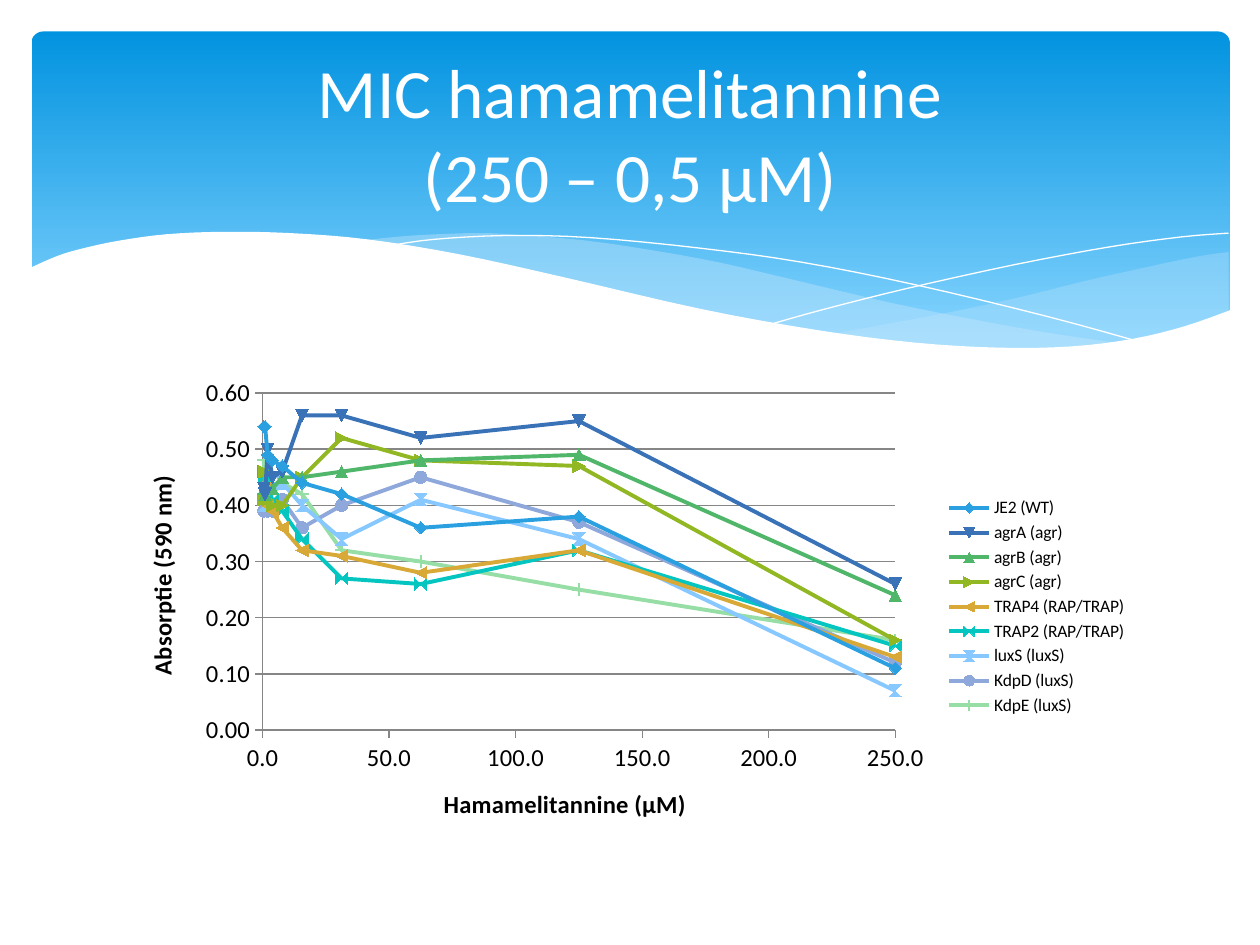
"""Build the hamamelitannine MIC slide: wave banner, title and scatter chart."""
import dataclasses
import itertools

import lxml.etree
import pptx
import pptx.chart.data
import pptx.dml.color
import pptx.enum.chart
import pptx.enum.shapes
import pptx.enum.text
import pptx.oxml.ns
import pptx.util

Pt = pptx.util.Pt
qn = pptx.oxml.ns.qn
MARKER = pptx.enum.chart.XL_MARKER_STYLE


@dataclasses.dataclass(frozen=True)
class Theme:
    font: str = "Calibri"
    white: str = "FFFFFF"
    text: str = "000000"
    axis: str = "868686"
    banner_top: str = "0293E0"
    banner_bottom: str = "83D3FE"
    wave: str = "C6E7FC"
    title_size: float = 39.6
    axis_size: float = 14
    legend_size: float = 10


THEME = Theme()

RIGHT_WAVE = [
    [(702, 144), (682.6, 146.9), (652, 153.4), (620, 160.6), (579.6, 170.6),
     (542, 178.6), (508, 185), (476, 190.8)],
    [(476, 190.8), (507.6, 195), (545, 198.7), (578, 200), (615, 198.7),
     (652, 193.7), (678, 186.5), (702, 177.8)],
]
CENTRE_WAVE = [
    [(643, 196.6), (602.6, 190.8), (558, 182.9), (508, 172.8), (453, 159.8),
     (410, 149.8), (370, 142.6), (335, 137.5), (302, 134.6), (273.6, 133.2),
     (236, 134.6), (206, 137.5)],
    [(206, 137.5), (246, 143.3), (291, 151.9), (323, 159.8), (381.6, 172.8),
     (432.7, 183.6), (479, 191.5), (521, 197.3), (565, 200), (603, 200.2),
     (643, 196.6)],
]
FALLING_LINE = [
    [(222.5, 140.4), (247.7, 136.8), (288.7, 134.6), (337.7, 135.8), (400, 141.8),
     (458, 149.8), (523, 162.7), (598, 180.7), (653, 195.8)],
]
RISING_LINE = [
    [(441.4, 185), (470, 177), (518, 164.9), (580, 151.2), (634, 141.1),
     (675, 135.4), (702, 133.2)],
]
WHITE_WAVE = [
    [(703.4, 177.1), (676.8, 186.5), (647, 193.7), (612, 198), (571, 198.7),
     (522.7, 195.8), (466.6, 188.6), (399.6, 176.4), (322, 158.4), (262.8, 145.4),
     (210, 136.8), (165.6, 133.2), (127, 132.5), (95, 133.9), (68.4, 137.5),
     (48, 141.8), (33, 146.2), (16.6, 153.4)],
    [(16.6, 236.9), (703.4, 236.9)],
]

CONCENTRATIONS = [250, 125, 62.5, 31.25, 15.6, 7.8, 3.9, 2, 1, 0.5]
STRAINS = [
    ("JE2 (WT)", "2AA0E0", MARKER.DIAMOND,
     [0.11, 0.38, 0.36, 0.42, 0.44, 0.47, 0.48, 0.49, 0.54, 0.54]),
    ("agrA (agr)", "3A72B8", None,
     [0.26, 0.55, 0.52, 0.56, 0.56, 0.46, 0.45, 0.5, 0.42, 0.43]),
    ("agrB (agr)", "50B66A", MARKER.TRIANGLE,
     [0.24, 0.49, 0.48, 0.46, 0.45, 0.45, 0.43, 0.43, 0.42, 0.43]),
    ("agrC (agr)", "91B722", None,
     [0.16, 0.47, 0.48, 0.52, 0.45, 0.4, 0.4, 0.41, 0.46, 0.41]),
    ("TRAP4 (RAP/TRAP)", "D8A937", None,
     [0.13, 0.32, 0.28, 0.31, 0.32, 0.36, 0.39, 0.4, 0.43, 0.41]),
    ("TRAP2 (RAP/TRAP)", "04C5C0", None,
     [0.15, 0.32, 0.26, 0.27, 0.34, 0.39, 0.41, 0.43, 0.45, 0.46]),
    ("luxS (luxS)", "86C8FF", None,
     [0.07, 0.34, 0.41, 0.34, 0.4, 0.44, 0.43, 0.42, 0.43, 0.4]),
    ("KdpD (luxS)", "8FA8DC", MARKER.CIRCLE,
     [0.12, 0.37, 0.45, 0.4, 0.36, 0.41, 0.39, 0.39, 0.44, 0.39]),
    ("KdpE (luxS)", "96DEA6", MARKER.PLUS,
     [0.16, 0.25, 0.3, 0.32, 0.42, 0.44, 0.42, 0.42, 0.42, 0.48]),
]


def rgb(value):
    """Return the colour object for a hex string."""
    return pptx.dml.color.RGBColor.from_string(value)


def paint(fill, color):
    """Give a fill one solid colour."""
    fill.solid()
    fill.fore_color.rgb = rgb(color)


def style_font(font, size, color, bold=False):
    """Apply the theme typeface with a size, colour and weight."""
    font.name, font.size, font.bold = THEME.font, Pt(size), bold
    font.color.rgb = rgb(color)


def smooth(strand, steps=4):
    """Return points on a Catmull-Rom curve through the strand."""
    padded = [strand[0], *strand, strand[-1]]
    points = [strand[0]]
    for a, b, c, d in zip(padded, padded[1:], padded[2:], padded[3:]):
        for t in (step / steps for step in range(1, steps + 1)):
            points.append(tuple(
                (2 * q + (r - p) * t + (2 * p - 5 * q + 4 * r - s) * t ** 2
                 + (3 * q - p - 3 * r + s) * t ** 3) / 2
                for p, q, r, s in zip(a, b, c, d)))
    return points


def add_curve(slide, strands, fill=None, opacity=100):
    """Draw joined strands as a filled wave, or as a white hairline without fill."""
    curve = itertools.chain.from_iterable(smooth(strand) for strand in strands)
    points = [(Pt(x), Pt(y)) for x, y in curve]
    builder = slide.shapes.build_freeform(*points[0], scale=1.0)
    builder.add_line_segments(points[1:], close=fill is not None)
    shape = builder.convert_to_shape()
    shape.shadow.inherit = False
    if fill is None:
        shape.fill.background()
        paint(shape.line.fill, THEME.white)
        shape.line.width = Pt(0)
        return
    shape.line.fill.background()
    paint(shape.fill, fill)
    if opacity < 100:
        color = shape.element.spPr.find(qn("a:solidFill"))[0]
        lxml.etree.SubElement(color, qn("a:alpha"), val=str(opacity * 1000))


def add_banner(slide):
    """Draw the rounded gradient banner."""
    shape = slide.shapes.add_shape(pptx.enum.shapes.MSO_SHAPE.ROUNDED_RECTANGLE,
                                   Pt(18), Pt(18), Pt(684.7), Pt(194.4))
    shape.adjustments[0] = 0.034
    shape.shadow.inherit = False
    shape.line.fill.background()
    shape.fill.gradient()
    shape.fill.gradient_angle = 270
    stops = [(0, THEME.banner_top), (0.9, THEME.banner_bottom)]
    for stop, (position, color) in zip(shape.fill.gradient_stops, stops):
        stop.position = position
        stop.color.rgb = rgb(color)


def format_title(slide, text):
    """Place the title in front of the banner and format it."""
    title = slide.shapes.title
    title.left, title.top, title.width, title.height = Pt(36), Pt(26.6), Pt(648), Pt(98.6)
    frame = title.text_frame
    frame.text = text
    frame.auto_size = pptx.enum.text.MSO_AUTO_SIZE.NONE
    frame.vertical_anchor = pptx.enum.text.MSO_ANCHOR.MIDDLE
    paragraph = frame.paragraphs[0]
    paragraph.alignment = pptx.enum.text.PP_ALIGN.CENTER
    style_font(paragraph.font, THEME.title_size, THEME.white)
    title.element.getparent().append(title.element)


def format_axis(axis, title, maximum, step, number_format):
    """Set an axis title, scale, labels and line."""
    axis.minimum_scale, axis.maximum_scale, axis.major_unit = 0, maximum, step
    axis.major_tick_mark = pptx.enum.chart.XL_TICK_MARK.OUTSIDE
    axis.minor_tick_mark = pptx.enum.chart.XL_TICK_MARK.NONE
    axis.tick_labels.number_format = number_format
    axis.tick_labels.number_format_is_linked = False
    style_font(axis.tick_labels.font, THEME.axis_size, THEME.text)
    axis.format.line.color.rgb = rgb(THEME.axis)
    axis.axis_title.text_frame.text = title
    style_font(axis.axis_title.text_frame.paragraphs[0].font,
               THEME.axis_size, THEME.text, bold=True)


def format_series(series, color, marker):
    """Style one smoothed curve and its markers."""
    series.smooth = True
    series.format.line.color.rgb = rgb(color)
    series.format.line.width = Pt(2.25)
    if marker is not None:
        series.marker.style = marker
    series.marker.size = 7
    paint(series.marker.format.fill, color)
    series.marker.format.line.color.rgb = rgb(color)


def place_plot(chart, **fractions):
    """Fix the inner plot area at fractions of the chart."""
    plot_area = chart.element.find(".//" + qn("c:plotArea"))
    for layout in plot_area.findall(qn("c:layout")):
        plot_area.remove(layout)
    layout = lxml.etree.Element(qn("c:layout"))
    manual = lxml.etree.SubElement(layout, qn("c:manualLayout"))
    settings = {"layoutTarget": "inner", "xMode": "edge", "yMode": "edge", **fractions}
    for name, value in settings.items():
        lxml.etree.SubElement(manual, qn("c:" + name), val=str(value))
    plot_area.insert(0, layout)


def add_absorption_chart(slide):
    """Add the scatter chart of absorption against concentration."""
    data = pptx.chart.data.XyChartData()
    for name, _, _, absorptions in STRAINS:
        series = data.add_series(name)
        for concentration, absorption in zip(CONCENTRATIONS, absorptions):
            series.add_data_point(concentration, absorption)
    chart = slide.shapes.add_chart(pptx.enum.chart.XL_CHART_TYPE.XY_SCATTER_SMOOTH,
                                   Pt(68.4), Pt(211), Pt(583.2), Pt(271.4), data).chart
    chart.has_title = False
    style_font(chart.font, THEME.legend_size, THEME.text)
    chart.plots[0].vary_by_categories = False
    for series, (_, color, marker, _) in zip(chart.plots[0].series, STRAINS):
        format_series(series, color, marker)
    format_axis(chart.category_axis, "Hamamelitannine (µM)", 250, 50, "0.0")
    format_axis(chart.value_axis, "Absorptie (590 nm)", 0.6, 0.1, "0.00")
    chart.category_axis.has_major_gridlines = False
    chart.value_axis.major_gridlines.format.line.color.rgb = rgb(THEME.axis)
    chart.has_legend = True
    chart.legend.position = pptx.enum.chart.XL_LEGEND_POSITION.RIGHT
    chart.legend.include_in_layout = False
    style_font(chart.legend.font, THEME.legend_size, THEME.text)
    place_plot(chart, x=0.14, y=0.05, w=0.62, h=0.71)


def main():
    """Build and save the slide."""
    presentation = pptx.Presentation()
    presentation.slide_width, presentation.slide_height = Pt(720), Pt(540)
    slide = presentation.slides.add_slide(presentation.slide_layouts[5])
    add_banner(slide)
    add_curve(slide, RIGHT_WAVE, THEME.wave, 29)
    add_curve(slide, CENTRE_WAVE, THEME.wave, 40)
    add_curve(slide, FALLING_LINE)
    add_curve(slide, RISING_LINE)
    add_curve(slide, WHITE_WAVE, THEME.white)
    format_title(slide, "MIC hamamelitannine\v(250 – 0,5 µM)")
    add_absorption_chart(slide)
    presentation.save("out.pptx")


if __name__ == "__main__":
    main()
